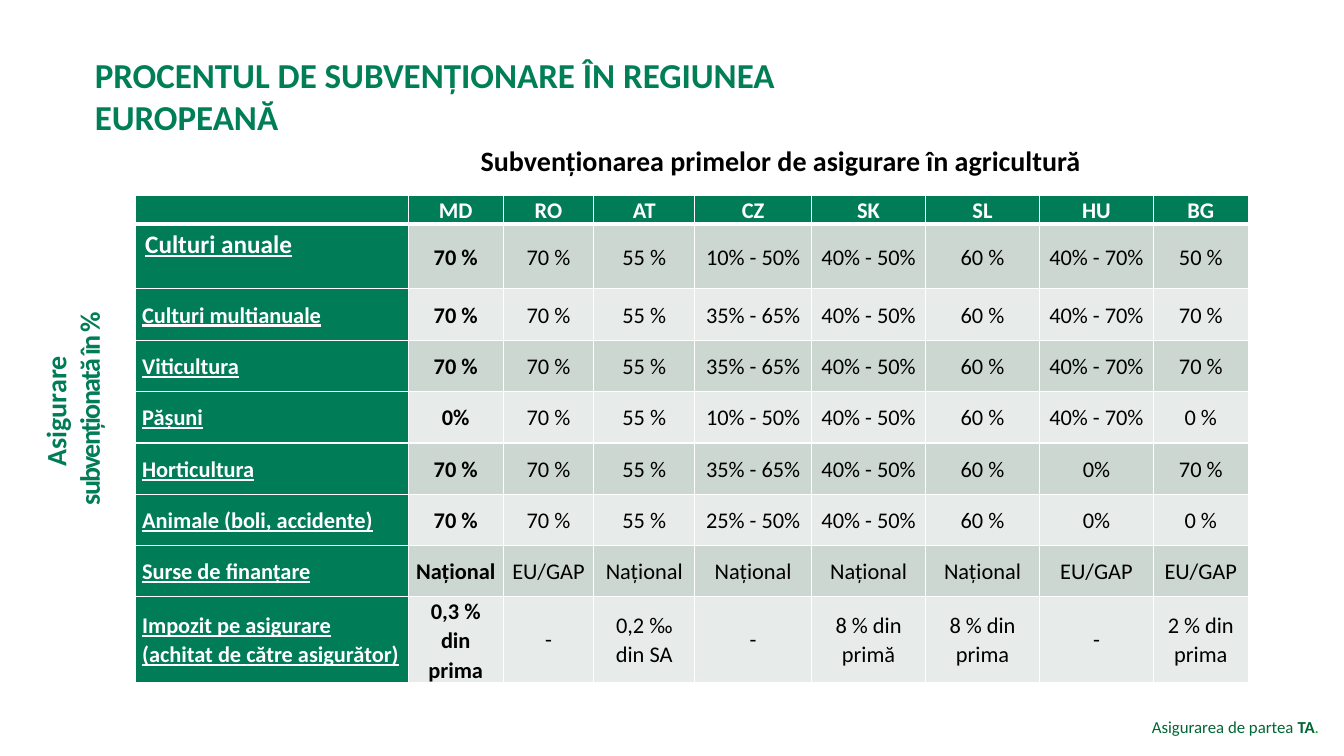
"""Build the slide on crop insurance subsidy rates across the European region."""
from typing import NamedTuple

from lxml.etree import SubElement
from pptx import Presentation
from pptx.dml.color import RGBColor
from pptx.enum.text import MSO_ANCHOR, MSO_AUTO_SIZE, PP_ALIGN
from pptx.oxml.ns import qn
from pptx.util import Inches, Pt

GREEN = RGBColor(0x00, 0x7C, 0x57)
TITLE_GREEN = RGBColor(0x00, 0x7F, 0x57)
FOOTER_GREEN = RGBColor(0x00, 0x66, 0x33)
FOOTER_DOT = RGBColor(0x00, 0xB3, 0x00)
WHITE = RGBColor(0xFF, 0xFF, 0xFF)
BLACK = RGBColor(0x00, 0x00, 0x00)
BANDS = (RGBColor(0xE7, 0xEC, 0xEA), RGBColor(0xCC, 0xD7, 0xD1))

COLUMN_WIDTHS = (2.71, 0.94, 0.9, 1, 1.16, 1.13, 1.13, 1.13, 0.94)
ROW_HEIGHTS = (0.28, 0.64, 0.51, 0.51, 0.51, 0.51, 0.51, 0.5, 0.77)


class Subsidy(NamedTuple):
    label: str
    values: tuple[str, ...]


class Style(NamedTuple):
    size: float
    color: RGBColor
    bold: bool = False
    underline: bool = False


SUBSIDIES = (
    Subsidy("", ("MD", "RO", "AT", "CZ", "SK", "SL", "HU", "BG")),
    Subsidy("Culturi anuale", ("70 %", "70 %", "55 %", "10% - 50%", "40% - 50%", "60 %", "40% - 70%", "50 %")),
    Subsidy("Culturi multianuale", ("70 %", "70 %", "55 %", "35% - 65%", "40% - 50%", "60 %", "40% - 70%", "70 %")),
    Subsidy("Viticultura", ("70 %", "70 %", "55 %", "35% - 65%", "40% - 50%", "60 %", "40% - 70%", "70 %")),
    Subsidy("Pășuni", ("0%", "70 %", "55 %", "10% - 50%", "40% - 50%", "60 %", "40% - 70%", "0 %")),
    Subsidy("Horticultura", ("70 %", "70 %", "55 %", "35% - 65%", "40% - 50%", "60 %", "0%", "70 %")),
    Subsidy("Animale (boli, accidente)", ("70 %", "70 %", "55 %", "25% - 50%", "40% - 50%", "60 %", "0%", "0 %")),
    Subsidy("Surse de finanțare", ("Național", "EU/GAP", "Național", "Național", "Național", "Național", "EU/GAP", "EU/GAP")),
    Subsidy("Impozit pe asigurare\n(achitat de către asigurător)",
            ("0,3 % din prima", "-", "0,2 ‰ din SA", "-", "8 % din primă", "8 % din prima", "-", "2 % din prima")),
)


def apply_style(font, style: Style) -> None:
    font.name = "Calibri"
    font.size = Pt(style.size)
    font.bold = style.bold
    font.underline = style.underline
    font.color.rgb = style.color


def add_text_frame(slide, left: float, top: float, width: float, height: float):
    frame = slide.shapes.add_textbox(Inches(left), Inches(top), Inches(width), Inches(height)).text_frame
    frame.word_wrap = True
    frame.auto_size = MSO_AUTO_SIZE.SHAPE_TO_FIT_TEXT
    return frame


def set_borders(cell, top: float, bottom: float) -> None:
    properties = cell._tc.get_or_add_tcPr()
    for side, width in (("L", 1), ("R", 1), ("T", top), ("B", bottom)):
        line = SubElement(properties, qn(f"a:ln{side}"), w=str(Pt(width)))
        SubElement(SubElement(line, qn("a:solidFill")), qn("a:srgbClr"), val=str(WHITE))


def fill_cell(cell, text: str, row: int, column: int) -> None:
    set_borders(cell, 3 if row == 1 else 1, 3 if row == 0 else 1)
    is_heading = row == 0 or column == 0
    is_first_crop = row == 1 and column == 0
    cell.fill.solid()
    cell.fill.fore_color.rgb = GREEN if is_heading else BANDS[row % 2]
    if not is_first_crop:
        cell.vertical_anchor = MSO_ANCHOR.MIDDLE
        cell.margin_left = cell.margin_right = Inches(0.07)
        cell.margin_top = cell.margin_bottom = 0
    cell.text = text
    style = Style(18 if is_first_crop else 16, WHITE if is_heading else BLACK,
                  is_heading or column == 1, column == 0)
    for paragraph in cell.text_frame.paragraphs:
        paragraph.alignment = PP_ALIGN.LEFT if column == 0 else PP_ALIGN.CENTER
        if not is_first_crop:
            paragraph.line_spacing = 1.07
        apply_style(paragraph.font, style)
        if not text:
            SubElement(paragraph._p, qn("a:endParaRPr"), sz="1200")


def add_subsidy_table(slide) -> None:
    table = slide.shapes.add_table(
        len(ROW_HEIGHTS), len(COLUMN_WIDTHS), Inches(1.34), Inches(1.94),
        Inches(sum(COLUMN_WIDTHS)), Inches(sum(ROW_HEIGHTS))).table
    for column, width in zip(table.columns, COLUMN_WIDTHS):
        column.width = Inches(width)
    for row, height in zip(table.rows, ROW_HEIGHTS):
        row.height = Inches(height)
    for row, subsidy in enumerate(SUBSIDIES):
        for column, text in enumerate((subsidy.label, *subsidy.values)):
            fill_cell(table.cell(row, column), text, row, column)


def add_footer(slide) -> None:
    paragraph = add_text_frame(slide, 9.4, 7.03, 3.78, 0.33).paragraphs[0]
    paragraph.alignment = PP_ALIGN.RIGHT
    paragraph.line_spacing = 1.15
    paragraph.space_after = Pt(10)
    for text, style in (("Asigurarea de partea ", Style(12, FOOTER_GREEN)),
                        ("TA", Style(12, FOOTER_GREEN, True)),
                        (".", Style(12, FOOTER_DOT))):
        run = paragraph.add_run()
        run.text = text
        apply_style(run.font, style)


def add_side_label(slide) -> None:
    frame = add_text_frame(slide, 0.38, 2.85, 0.67, 2.44)
    frame.margin_left = frame.margin_right = frame.margin_bottom = 0
    frame.margin_top = Inches(0.04)
    frame._txBody.bodyPr.set("vert", "vert270")
    paragraph = frame.paragraphs[0]
    paragraph.alignment = PP_ALIGN.CENTER
    indents = paragraph._p.get_or_add_pPr()
    indents.set("marL", str(Inches(0.07)))
    indents.set("indent", str(Inches(-0.05)))
    apply_style(paragraph.font, Style(20, GREEN, True))
    paragraph.add_run().text = "Asigurare "
    unit = paragraph.add_run()
    unit.text = "subvenționată în %"
    unit._r.get_or_add_rPr().set("spc", "-120")


def add_title(slide) -> None:
    title = slide.shapes.title
    title.left, title.top, title.width, title.height = map(Inches, (0.84, 0.63, 8.62, 0.63))
    frame = title.text_frame
    frame.text = "PROCENTUL DE SUBVENȚIONARE ÎN REGIUNEA EUROPEANĂ"
    frame.word_wrap = True
    frame.auto_size = MSO_AUTO_SIZE.NONE
    frame.vertical_anchor = MSO_ANCHOR.MIDDLE
    frame.paragraphs[0].alignment = PP_ALIGN.LEFT
    apply_style(frame.paragraphs[0].font, Style(25, TITLE_GREEN, True))


def add_table_heading(slide) -> None:
    paragraph = add_text_frame(slide, 4.67, 1.37, 6.67, 0.44).paragraphs[0]
    paragraph.text = "Subvenționarea primelor de asigurare în agricultură"
    apply_style(paragraph.font, Style(20, BLACK, True))


def main() -> None:
    presentation = Presentation()
    presentation.slide_width = Inches(13.33)
    presentation.slide_height = Inches(7.5)
    slide = presentation.slides.add_slide(presentation.slide_layouts[5])
    add_footer(slide)
    add_side_label(slide)
    add_subsidy_table(slide)
    add_title(slide)
    add_table_heading(slide)
    presentation.save("out.pptx")


if __name__ == "__main__":
    main()
